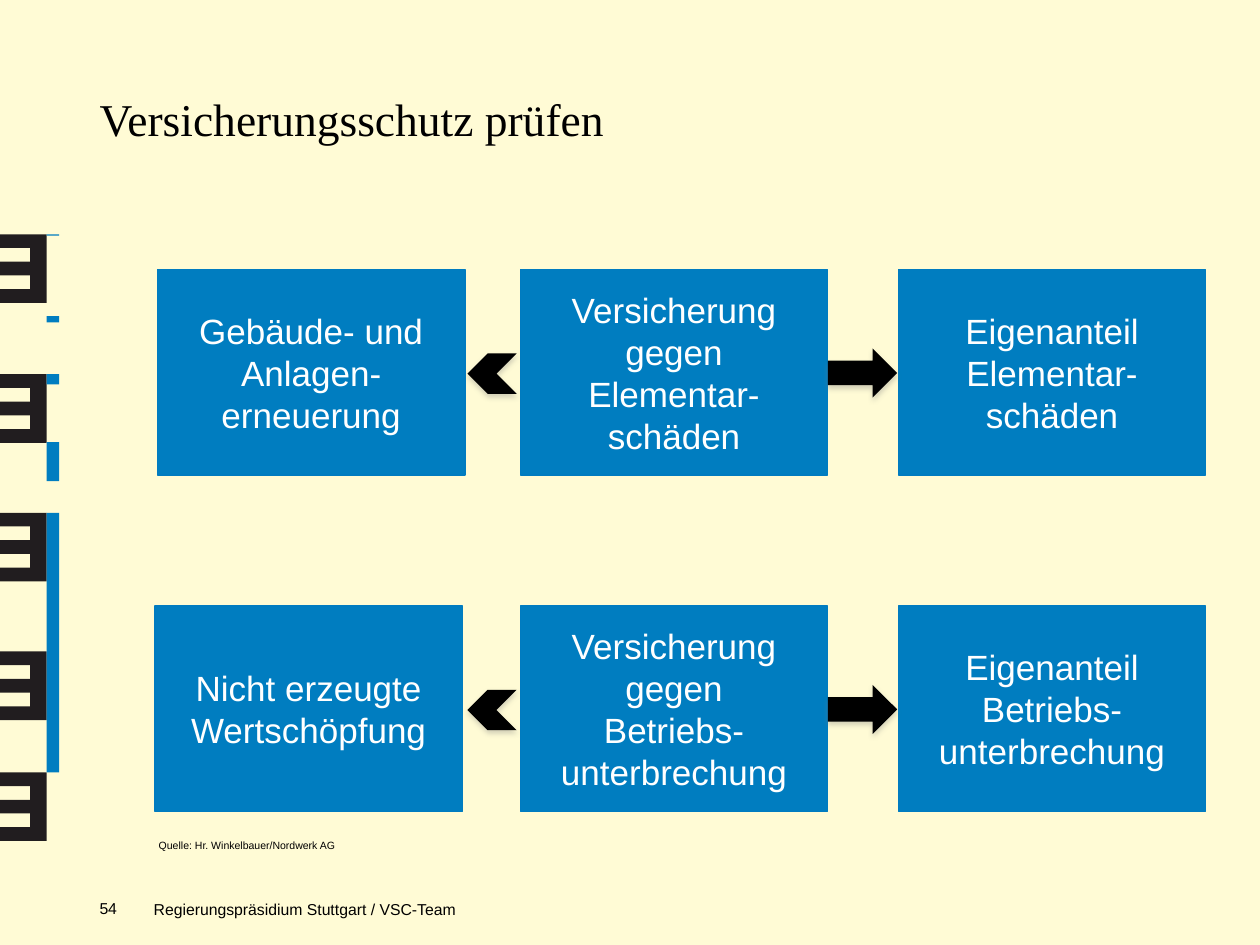
from lxml import etree
from pptx import Presentation
from pptx.dml.color import RGBColor
from pptx.enum.shapes import MSO_SHAPE as Shape
from pptx.enum.text import MSO_ANCHOR as Anchor, PP_ALIGN as Align
from pptx.oxml.ns import qn
from pptx.util import Inches, Pt

COLORS = {
    "cream": "FFFBD5", "ink": "211D1F", "blue": "007DC0", "edge": "007BC0",
    "black": "000000", "white": "FFFFFF", "shadow": "808080",
}

# Left edge pattern: tops of the combs, then (top, height) of the blue bars
COMB_TOPS = [1.86, 2.97, 4.07, 5.17, 6.13]
BARS = [(1.86, 0.01), (2.51, 0.05), (2.97, 0.08), (3.51, 0.31), (4.07, 2.06)]

# Each row: top, left edge of the first box, lines of the three boxes
ROWS = [
    (2.14, 1.25, [["Gebäude- und Anlagen-erneuerung"],
                  ["Versicherung gegen", "Elementar-schäden"],
                  ["Eigenanteil", "Elementar-schäden"]]),
    (4.81, 1.23, [["Nicht erzeugte", "Wertschöpfung"],
                  ["Versicherung gegen", "Betriebs-unterbrechung"],
                  ["Eigenanteil", "Betriebs-unterbrechung"]]),
]
BOX_WIDTH, BOX_HEIGHT = 2.44, 1.63
INSURANCE_LEFT, SHARE_LEFT = 4.13, 7.13


def rgb(name):
    return RGBColor.from_string(COLORS[name])


def write_run(paragraph, text, size, color="black", font="Arial"):
    run = paragraph.add_run()
    run.text = text
    run.font.size = Pt(size)
    run.font.name = font
    run.font.color.rgb = rgb(color)


def set_margins(frame, top=0):
    frame.margin_left = frame.margin_right = frame.margin_bottom = 0
    frame.margin_top = Inches(top)


def paint(shape, fill):
    shape.shadow.inherit = False
    shape.fill.solid()
    shape.fill.fore_color.rgb = rgb(fill)
    shape.line.fill.background()


def add_preset(slide, kind, left, top, width, height, fill):
    shape = slide.shapes.add_shape(
        kind, Inches(left), Inches(top), Inches(width), Inches(height))
    paint(shape, fill)
    return shape


def add_comb(slide, top):
    spine, gap_right, step = 0.37, 0.24, 0.109
    points = []
    for gap in (1, 3):
        upper, lower = top + gap * step, top + (gap + 1) * step
        points += [(0, upper), (gap_right, upper), (gap_right, lower), (0, lower)]
    bottom = top + 5 * step
    points += [(0, bottom), (spine, bottom), (spine, top)]
    builder = slide.shapes.build_freeform(0, Inches(top))
    builder.add_line_segments([(Inches(x), Inches(y)) for x, y in points])
    paint(builder.convert_to_shape(), "ink")


def add_box(slide, left, top, lines):
    box = add_preset(slide, Shape.RECTANGLE, left, top, BOX_WIDTH, BOX_HEIGHT, "blue")
    box.line.color.rgb = rgb("edge")
    box.line.width = Pt(0.75)
    frame = box.text_frame
    frame.word_wrap = True
    frame.vertical_anchor = Anchor.MIDDLE
    paragraph = frame.paragraphs[0]
    paragraph.alignment = Align.CENTER
    for number, line in enumerate(lines):
        if number:
            paragraph.add_line_break()
        write_run(paragraph, line, 20, "white")


def add_arrow(slide, kind, left, top, width, height, rotation=0):
    arrow = add_preset(slide, kind, left, top, width, height, "black")
    arrow.rotation = rotation
    # Soft shadow below the arrow
    effects = arrow._element.spPr.find(qn("a:effectLst"))
    shadow = etree.SubElement(
        effects, qn("a:outerShdw"), blurRad=str(Pt(3.1)), dist=str(Pt(1.8)),
        dir="5400000", rotWithShape="0")
    color = etree.SubElement(shadow, qn("a:srgbClr"), val=COLORS["shadow"])
    etree.SubElement(color, qn("a:alpha"), val="35000")


def add_label(slide, left, top, width, height, text, size,
              anchor=Anchor.TOP, inset_top=0):
    label = slide.shapes.add_textbox(
        Inches(left), Inches(top), Inches(width), Inches(height))
    frame = label.text_frame
    frame.word_wrap = True
    frame.vertical_anchor = anchor
    set_margins(frame, inset_top)
    write_run(frame.paragraphs[0], text, size)


def set_title(slide, text):
    title = slide.shapes.title
    title.left, title.top = Inches(0.79), Inches(0.72)
    title.width, title.height = Inches(8.86), Inches(0.94)
    frame = title.text_frame
    frame.vertical_anchor = Anchor.TOP
    set_margins(frame)
    paragraph = frame.paragraphs[0]
    paragraph.alignment = Align.LEFT
    write_run(paragraph, text, 26, font="Times New Roman")


def main():
    prs = Presentation()
    prs.slide_width, prs.slide_height = Inches(10), Inches(7.5)
    slide = prs.slides.add_slide(prs.slide_layouts[5])
    slide.background.fill.solid()
    slide.background.fill.fore_color.rgb = rgb("cream")

    # Pattern on the left edge
    for top in COMB_TOPS:
        add_comb(slide, top)
    for top, height in BARS:
        add_preset(slide, Shape.RECTANGLE, 0.37, top, 0.1, height, "blue")

    set_title(slide, "Versicherungsschutz prüfen")

    # Two rows: insurance in the middle, arrows to both sides
    for top, first_left, texts in ROWS:
        for left, lines in zip((first_left, INSURANCE_LEFT, SHARE_LEFT), texts):
            add_box(slide, left, top, lines)
        middle = top + BOX_HEIGHT / 2
        add_arrow(slide, Shape.RIGHT_ARROW, 6.57, middle - 0.19, 0.55, 0.39)
        add_arrow(slide, Shape.CHEVRON, 3.71, middle - 0.15, 0.39, 0.32, 180)

    # Source and footer
    add_label(slide, 1.26, 6.66, 2.41, 0.1, "Quelle: Hr. Winkelbauer/Nordwerk AG", 6)
    add_label(slide, 1.22, 7.09, 3.54, 0.2,
              "Regierungspräsidium Stuttgart / VSC-Team", 9, Anchor.BOTTOM, 0.05)
    add_label(slide, 0.79, 7.13, 0.3, 0.28, "54", 9)

    prs.save("out.pptx")


if __name__ == "__main__":
    main()
